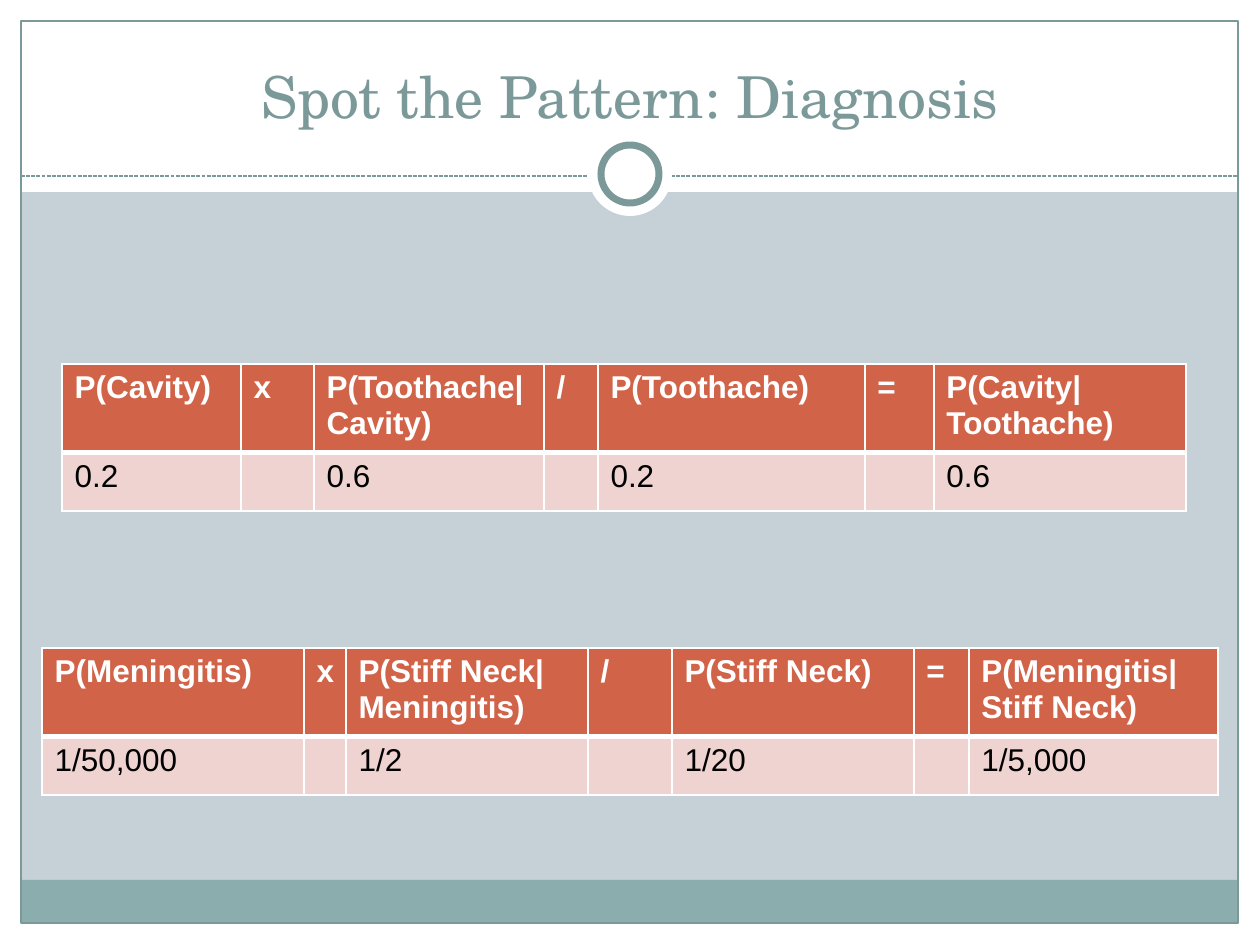
"""Build the diagnosis slide with its two probability tables."""
import pptx
import pptx.util
import pptx.oxml
import pptx.oxml.ns
import pptx.dml.color
import pptx.enum.dml
import pptx.enum.shapes
import pptx.enum.text
import lxml.etree

PX = 914400 // 126
COLORS = {"back": "C5D1D7", "white": "FFFFFF", "band": "8CADAE", "frame": "7C999A",
          "head": "D16349", "body": "EED3D0", "black": "000000"}
RGB = {name: pptx.dml.color.RGBColor.from_string(value) for name, value in COLORS.items()}
SHAPES = pptx.enum.shapes.MSO_SHAPE


def add_box(kind, place, fill=None, line=None, weight=0.75):
    box = page.shapes.add_shape(kind, *[value * PX for value in place])
    box.shadow.inherit = False
    if fill:
        box.fill.solid()
        box.fill.fore_color.rgb = RGB[fill]
    else:
        box.fill.background()
    if line:
        box.line.color.rgb = RGB[line]
        box.line.width = pptx.util.Pt(weight)
    else:
        box.line.fill.background()


def add_borders(cell, bottom):
    props = cell._tc.get_or_add_tcPr()
    for index, side in enumerate("LRTB"):
        points = bottom if side == "B" else 1
        props.insert(index, pptx.oxml.parse_xml(
            f'<a:ln{side} {pptx.oxml.ns.nsdecls("a")} w="{pptx.util.Pt(points)}">'
            f'<a:solidFill><a:srgbClr val="{COLORS["white"]}"/></a:solidFill></a:ln{side}>'))


deck = pptx.Presentation()
deck.slide_width, deck.slide_height = 1260 * PX, 945 * PX
page = deck.slides.add_slide(deck.slide_layouts[6])
page.background.fill.solid()
page.background.fill.fore_color.rgb = RGB["back"]

for margin in [(0, 924, 1260, 21), (0, 0, 1260, 192), (0, 0, 21, 945), (1239, 0, 21, 945)]:
    add_box(SHAPES.RECTANGLE, margin, "white")
add_box(SHAPES.RECTANGLE, (21, 880, 1217, 43), "band")
add_box(SHAPES.RECTANGLE, (21, 21, 1217, 902), line="frame")

rule = page.shapes.add_connector(pptx.enum.shapes.MSO_CONNECTOR.STRAIGHT,
                                 21 * PX, 176 * PX, 1238 * PX, 176 * PX)
rule.line.color.rgb = RGB["frame"]
rule.line.width = pptx.util.Pt(0.75)
rule.line.dash_style = pptx.enum.dml.MSO_LINE.SQUARE_DOT
lxml.etree.SubElement(rule._element.spPr, pptx.oxml.ns.qn("a:effectLst"))

add_box(SHAPES.OVAL, (588, 132, 84, 84), "white")
add_box(SHAPES.OVAL, (601, 145, 58, 58), "white", "frame", 4)

title = page.shapes.add_textbox(42 * PX, 31 * PX, 1176 * PX, 105 * PX).text_frame
title.word_wrap = True
title.vertical_anchor = pptx.enum.text.MSO_ANCHOR.BOTTOM
para = title.paragraphs[0]
para.alignment = pptx.enum.text.PP_ALIGN.CENTER
span = para.add_run()
span.text = "Spot the Pattern: Diagnosis"
span.font.name = "TeX Gyre Schola"
span.font.size = pptx.util.Pt(33)
span.font.color.rgb = RGB["frame"]

tables = [
    (62, 364, [179, 73, 230, 54, 267, 69, 252],
     [["P(Cavity)", "x", "P(Toothache|Cavity)", "/", "P(Toothache)", "=",
       "P(Cavity|Toothache)"],
      ["0.2", "", "0.6", "", "0.2", "", "0.6"]]),
    (42, 648, [262, 42, 242, 84, 242, 55, 249],
     [["P(Meningitis)", "x", "P(Stiff Neck| Meningitis)", "/", "P(Stiff Neck)", "=",
       "P(Meningitis|Stiff Neck)"],
      ["1/50,000", "", "1/2", "", "1/20", "", "1/5,000"]]),
]
row_styles = [(83, "head", "white", True, 3), (59, "body", "black", False, 1)]

for left, top, widths, rows in tables:
    height = sum(style[0] for style in row_styles)
    table = page.shapes.add_table(len(rows), len(widths), left * PX, top * PX,
                                  sum(widths) * PX, height * PX).table
    for column, width in zip(table.columns, widths):
        column.width = width * PX
    for row, texts, (tall, fill, ink, bold, bottom) in zip(table.rows, rows, row_styles):
        row.height = tall * PX
        for cell, text in zip(row.cells, texts):
            cell.fill.solid()
            cell.fill.fore_color.rgb = RGB[fill]
            add_borders(cell, bottom)
            if text:
                span = cell.text_frame.paragraphs[0].add_run()
                span.text = text
                span.font.name = "Arial"
                span.font.size = pptx.util.Pt(18)
                span.font.bold = bold
                span.font.color.rgb = RGB[ink]

deck.save("out.pptx")
